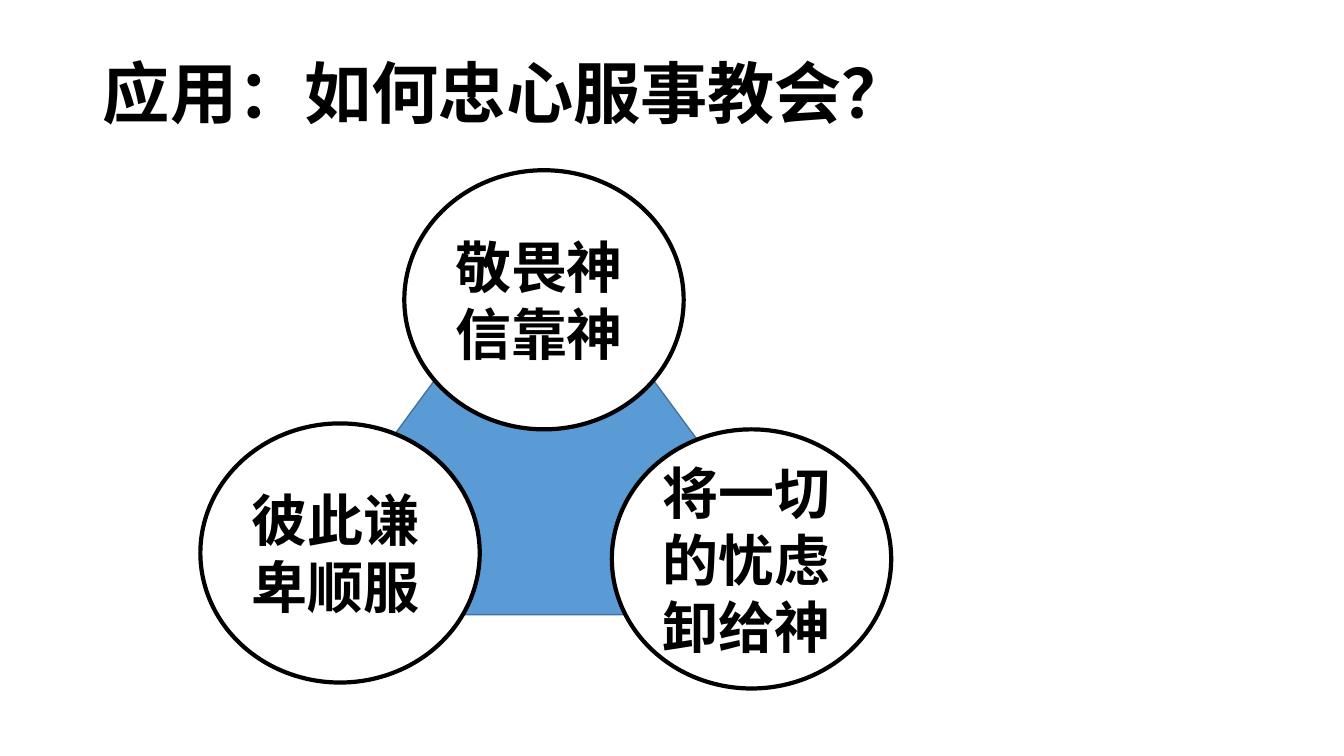
from pptx import Presentation
from pptx.dml.color import RGBColor
from pptx.enum.shapes import MSO_SHAPE
from pptx.enum.text import MSO_ANCHOR, PP_ALIGN
from pptx.util import Cm, Pt

COLORS = {"ink": "000000", "paper": "FFFFFF", "blue": "5B9BD5", "edge": "43739E"}
CIRCLE_WIDTH, CIRCLE_HEIGHT = 7.04, 6.53
CIRCLES = [
    ("彼此谦卑顺服", 5.05, 10.67),
    ("将一切的忧虑卸给神", 15.42, 10.82),
    ("敬畏神信靠神", 10.19, 4.29),
]


def add_outlined(kind, left, top, width, height, fill, line, weight):
    shape = page.shapes.add_shape(kind, Cm(left), Cm(top), Cm(width), Cm(height))
    shape.shadow.inherit = False
    shape.fill.solid()
    shape.fill.fore_color.rgb = RGBColor.from_string(COLORS[fill])
    shape.line.color.rgb = RGBColor.from_string(COLORS[line])
    shape.line.width = Pt(weight)
    return shape


def write_bold(shape, text, size):
    frame = shape.text_frame
    frame.text = text
    frame.word_wrap = True
    frame.vertical_anchor = MSO_ANCHOR.MIDDLE
    para = frame.paragraphs[0]
    para.alignment = PP_ALIGN.LEFT
    para.font.name = "Calibri"
    para.font.size = Pt(size)
    para.font.bold = True
    para.font.color.rgb = RGBColor.from_string(COLORS["ink"])
    return para


deck = Presentation()
deck.slide_width, deck.slide_height = Cm(33.87), Cm(19.05)
page = deck.slides.add_slide(deck.slide_layouts[5])

title = page.shapes.title
title.left, title.top, title.width, title.height = Cm(2.34), Cm(0.61), Cm(29.21), Cm(3.68)
write_bold(title, "应用：如何忠心服事教会？", 48).line_spacing = 0.9

add_outlined(MSO_SHAPE.ISOSCELES_TRIANGLE, 6.6, 5.84, 14.22, 9.65, "blue", "edge", 1)

for text, left, top in CIRCLES:
    circle = add_outlined(MSO_SHAPE.OVAL, left, top, CIRCLE_WIDTH, CIRCLE_HEIGHT, "paper", "ink", 3)
    write_bold(circle, text, 40).space_after = Pt(12)

deck.save("out.pptx")
